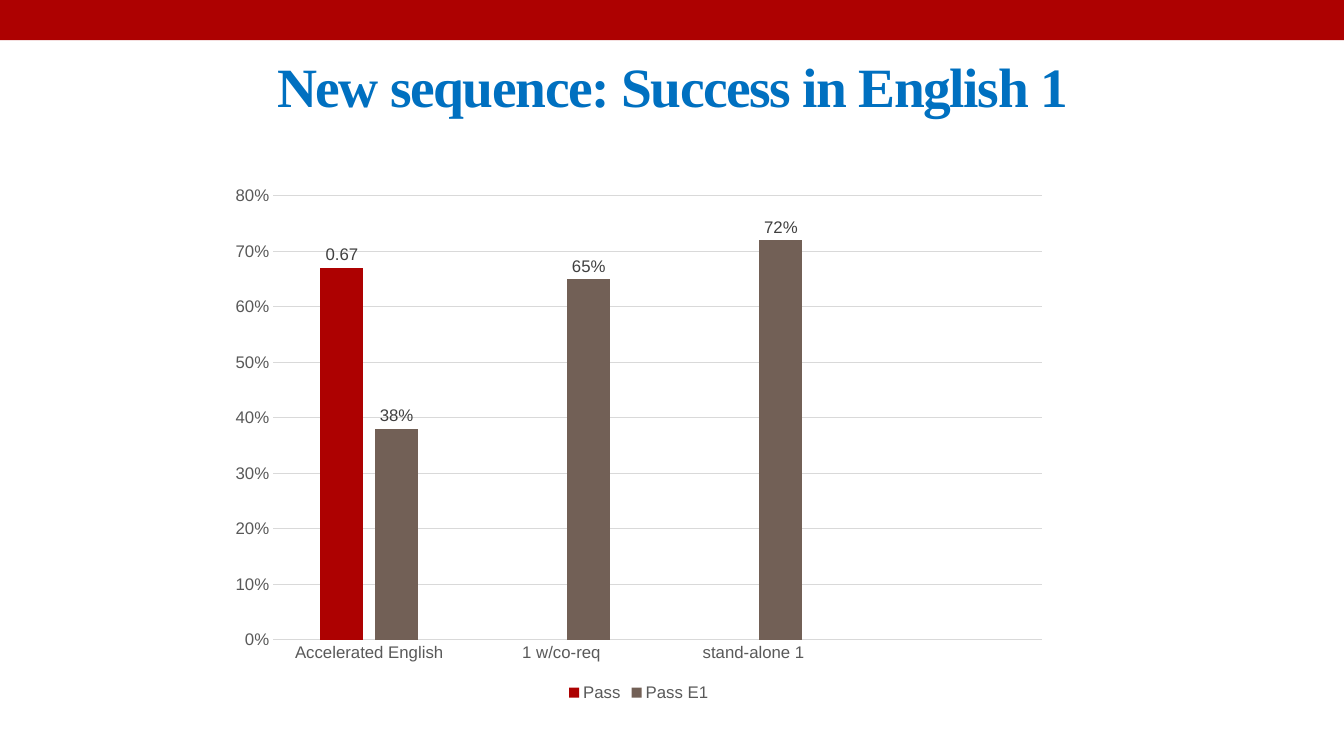
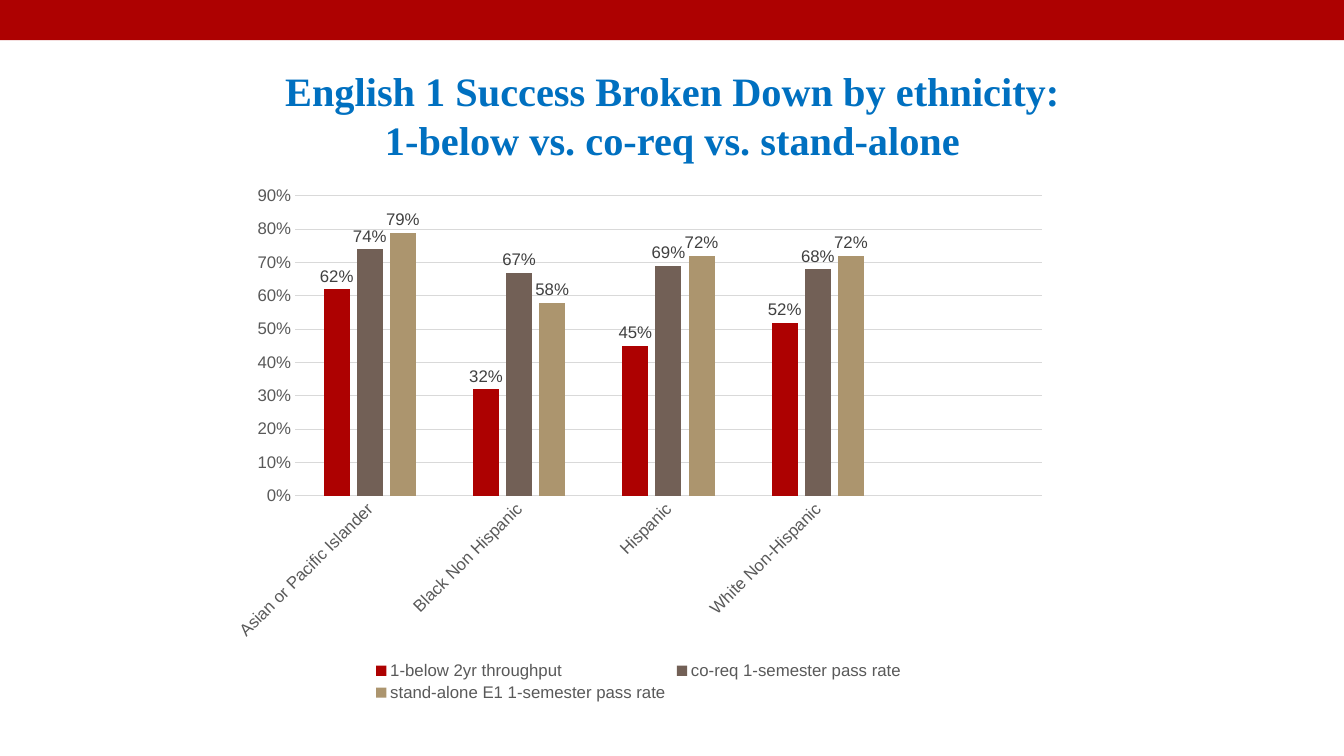
from pptx import Presentation
from pptx.chart.data import CategoryChartData
from pptx.dml.color import RGBColor
from pptx.enum.chart import XL_CHART_TYPE as ChartType, XL_LABEL_POSITION as LabelPosition
from pptx.enum.chart import XL_LEGEND_POSITION as LegendPosition, XL_TICK_MARK as TickMark
from pptx.enum.shapes import MSO_SHAPE as Shape
from pptx.enum.text import MSO_ANCHOR as Anchor, PP_ALIGN as Align
from pptx.oxml.ns import qn
from pptx.util import Inches, Pt

COLORS = {
    "band": "AD0101",
    "title": "0070C0",
    "grid": "D9D9D9",
    "axis_text": "595959",
    "label_text": "404040",
}
SERIES_COLORS = ["AD0101", "726056", "AC956E"]
TITLE_FONT, CHART_FONT = "Times New Roman", "Arial"
PERCENT = "0%"
CHART_AREA = (2.17, 1.75, 8.33, 5.25)

# Each chart ends with an empty category; a series is (name, label format, values).
SLIDES = [
    {
        "title": ["New sequence: Success in English 1"],
        "title_area": (0.67, 0.5, 12, 0.7),
        "title_format": {"size": 39.6, "spacing": -1},
        "categories": ["Accelerated English", "1 w/co-req", "stand-alone 1", ""],
        "series": [
            ("Pass", "General", [0.67, None, None, None]),
            ("Pass E1", PERCENT, [0.38, 0.65, 0.72, None]),
        ],
        "maximum": 0.8,
        "label_angle": 0,
    },
    {
        "title": ["English 1 Success Broken Down by ethnicity:",
                  "1-below vs. co-req vs. stand-alone"],
        "title_area": (0.67, 0.58, 12, 1.12),
        "title_format": {"size": 28.8},
        "categories": ["Asian or Pacific Islander", "Black Non Hispanic",
                       "Hispanic", "White Non-Hispanic", ""],
        "series": [
            ("1-below 2yr throughput", PERCENT, [0.62, 0.32, 0.45, 0.52, None]),
            ("co-req 1-semester pass rate", PERCENT, [0.74, 0.67, 0.69, 0.68, None]),
            ("stand-alone E1 1-semester pass rate", PERCENT, [0.79, 0.58, 0.72, 0.72, None]),
        ],
        "maximum": 0.9,
        "label_angle": -45,
    },
]


def rgb(value):
    return RGBColor.from_string(value)


def style_font(font, name, size, color, bold=False):
    font.name, font.size, font.bold = name, Pt(size), bold
    font.color.rgb = rgb(color)


def add_text(page, lines, area, size, color=COLORS["title"], name=TITLE_FONT,
             bold=True, align=Align.CENTER, spacing=0):
    box = page.shapes.add_textbox(*map(Inches, area))
    frame = box.text_frame
    frame.word_wrap = True
    frame.vertical_anchor = Anchor.MIDDLE
    for index, line in enumerate(lines):
        para = frame.add_paragraph() if index else frame.paragraphs[0]
        para.alignment = align
        span = para.add_run()
        span.text = line
        style_font(span.font, name, size, color, bold)
        if spacing:
            span.font._element.set("spc", str(round(spacing * 100)))


def add_band(page, width):
    band = page.shapes.add_shape(Shape.RECTANGLE, 0, 0, width, Inches(0.4))
    band.shadow.inherit = False
    band.fill.solid()
    band.fill.fore_color.rgb = rgb(COLORS["band"])
    band.line.fill.background()


def style_axes(chart, maximum, label_angle):
    category, value = chart.category_axis, chart.value_axis
    for axis in (category, value):
        axis.major_tick_mark = axis.minor_tick_mark = TickMark.NONE
        style_font(axis.tick_labels.font, CHART_FONT, 12, COLORS["axis_text"])
    value.minimum_scale, value.maximum_scale, value.major_unit = 0, maximum, 0.1
    value.tick_labels.number_format = PERCENT
    value.tick_labels.number_format_is_linked = False
    value.has_major_gridlines = True
    value.format.line.fill.background()
    for line in (category.format.line, value.major_gridlines.format.line):
        line.color.rgb = rgb(COLORS["grid"])
        line.width = Pt(0.75)
    if label_angle:
        body = category._element.find(qn("c:txPr")).find(qn("a:bodyPr"))
        body.set("rot", str(label_angle * 60000))
        body.set("vert", "horz")


def add_column_chart(page, categories, series, maximum, label_angle):
    data = CategoryChartData(number_format=PERCENT)
    data.categories = categories
    for name, number_format, values in series:
        data.add_series(name, values, number_format)
    chart = page.shapes.add_chart(
        ChartType.COLUMN_CLUSTERED, *map(Inches, CHART_AREA), data).chart
    style_font(chart.font, CHART_FONT, 10, "000000")
    chart.has_title = False
    chart.has_legend = True
    chart.legend.position = LegendPosition.BOTTOM
    chart.legend.include_in_layout = False
    style_font(chart.legend.font, CHART_FONT, 12, COLORS["axis_text"])
    style_axes(chart, maximum, label_angle)

    plot = chart.plots[0]
    plot.gap_width, plot.overlap, plot.vary_by_categories = 219, -27, False
    for column, color, (_, number_format, _) in zip(plot.series, SERIES_COLORS, series):
        column.invert_if_negative = False
        column.format.fill.solid()
        column.format.fill.fore_color.rgb = rgb(color)
        labels = column.data_labels
        labels.show_value = True
        labels.position = LabelPosition.OUTSIDE_END
        labels.number_format = number_format
        labels.number_format_is_linked = False
        style_font(labels.font, CHART_FONT, 12, COLORS["label_text"])


def main():
    deck = Presentation()
    deck.slide_width, deck.slide_height = Inches(13.33), Inches(7.5)
    for content in SLIDES:
        page = deck.slides.add_slide(deck.slide_layouts[6])
        add_band(page, deck.slide_width)
        add_text(page, content["title"], content["title_area"], **content["title_format"])
        add_column_chart(page, content["categories"], content["series"],
                         content["maximum"], content["label_angle"])
    deck.save("out.pptx")


if __name__ == "__main__":
    main()
